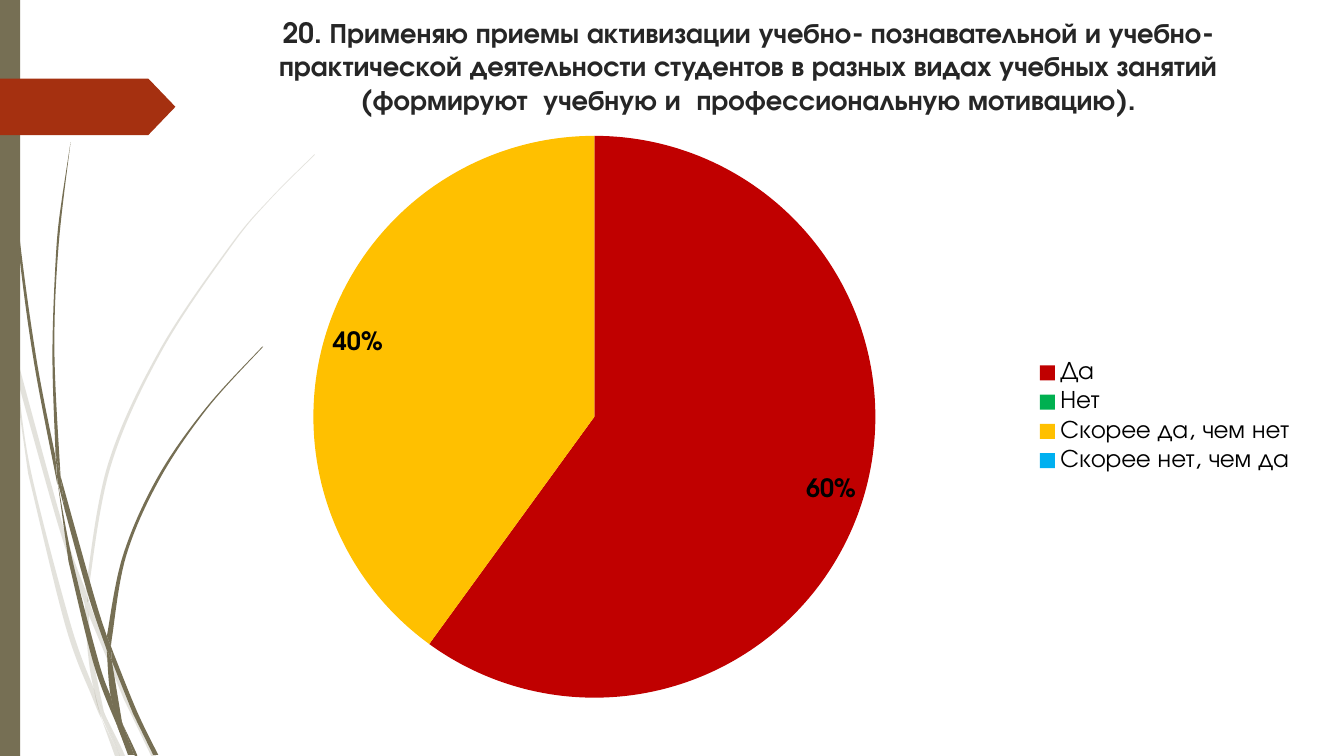
from pptx import Presentation
from pptx import util as u
from pptx.chart.data import CategoryChartData
from pptx.dml.color import RGBColor
from pptx.enum import chart as ch, shapes, text
from pptx.oxml.ns import qn
from pptx.oxml.xmlchemy import OxmlElement

FONT = "TeX Gyre Adventor"
OLIVE = "766F54"
RUST = "A53010"

PALE_STEMS = [
    ([(.11, 3.5), (.09, 3.22), (0, 2.82)], [(0, 2.99), (.1, 3.44)]),
    ([(.17, 3.76), (.58, 5.22), (.84, 5.99)], [(.85, 5.86), (.62, 5.2), (.14, 3.45)]),
    ([(.88, 5.96), (.88, 6.1)], [(1.23, 6.94), (1.5, 7.5)],
     [(1.55, 7.5), (1.27, 6.92), (.92, 6.07)]),
    ([(1.19, 7.5), (1.24, 7.5), (1.05, 7.11)],),
    ([(.93, 6.83), (.7, 6.19), (.31, 4.69), (.17, 3.76), (.11, 3.5)],
     [(.28, 4.7), (.65, 6.21), (.92, 6.93), (1.01, 7.14)]),
    ([(.84, 5.99), (.87, 6.46), (.93, 6.83), (1.05, 7.11)],
     [(1.03, 7.06), (.91, 6.46), (.88, 6.08)]),
    ([(.88, 5.96), (.88, 5.84), (1.1, 4.62), (1.6, 3.49), (2.29, 2.45), (2.68, 1.98),
      (3.12, 1.54)],
     [(3.12, 1.53), (2.68, 1.97), (2.28, 2.44), (1.58, 3.48), (1.07, 4.61), (.85, 5.84)]),
    ([(1.01, 7.14), (1.14, 7.5)], [(1.19, 7.5)]),
    ([(.88, 6.08), (.88, 5.96)], [(.85, 5.86), (.84, 5.99)]),
    ([(.93, 6.83), (.99, 7.07), (1.19, 7.5)], [(1.05, 7.11), (.96, 6.92)]),
]
DARK_STEMS = [
    ([(.03, 0), (.03, .48), (.07, 1.1), (.17, 2.33), (.33, 3.55), (.57, 4.81)],
     [(.55, 4.53), (.36, 3.55), (.19, 2.32), (.08, 1.09), (.05, .48), (.03, 0)]),
    ([(.64, 5.05), (.88, 5.92), (1.06, 6.45)], [(1.06, 6.31), (.93, 5.9), (.6, 4.72)]),
    ([(1.1, 6.41), (1.11, 6.56)], [(1.32, 7.08), (1.52, 7.49)],
     [(1.57, 7.49), (1.36, 7.06), (1.13, 6.49)]),
    ([(1.1, 6.91), (.98, 6.57), (.72, 5.56), (.57, 4.77)],
     [(.68, 5.57), (.93, 6.59), (1.17, 7.22)]),
    ([(.6, 4.72), (.54, 3.49), (.58, 2.45), (.7, 1.41)],
     [(.62, 1.93), (.56, 2.45), (.52, 3.49), (.55, 4.49)]),
    ([(1.33, 7.49), (1.36, 7.49), (1.22, 7.19)],),
    ([(.57, 4.77), (.64, 5.05)], [(.6, 4.72), (.55, 4.49)]),
    ([(1.11, 6.33), (1.25, 5.52), (1.58, 4.76), (2.05, 4.06), (2.61, 3.44)],
     [(2.6, 3.44), (2.04, 4.05), (1.56, 4.74), (1.22, 5.51), (1.06, 6.31)], [(1.1, 6.41)]),
    ([(1.17, 7.22), (1.27, 7.49)], [(1.31, 7.49)]),
    ([(1.06, 6.45), (1.1, 6.91), (1.22, 7.19)], [(1.21, 7.16), (1.11, 6.56)]),
    ([(1.06, 6.45), (1.11, 6.56)], [(1.1, 6.41), (1.06, 6.31)]),
    ([(1.1, 6.91), (1.17, 7.22), (1.3, 7.49)], [(1.33, 7.49), (1.22, 7.19), (1.16, 7.06)]),
]


def rgb(value):
    return RGBColor.from_string(value)


def handles(edge):
    padded = [edge[0], *edge, edge[-1]]
    return [[tuple(q + (r - p) / 6 for p, q, r in zip(a, b, c)),
             tuple(r - (s - q) / 6 for q, r, s in zip(b, c, d))]
            for a, b, c, d in zip(padded, padded[1:], padded[2:], padded[3:])]


class SurveySlide:
    def __init__(self, deck, font):
        self.slide = deck.slides.add_slide(deck.slide_layouts[5])
        self.font = font

    def apply(self, target, **formats):
        for key, value in formats.items():
            setattr(target, key, value)

    def type(self, font, size, color, bold=False):
        self.apply(font, name=self.font, size=u.Pt(size), bold=bold)
        font.color.rgb = rgb(color)

    def paint(self, shape, color, opacity=100):
        shape.shadow.inherit = False
        shape.fill.solid()
        shape.fill.fore_color.rgb = rgb(color)
        shape.line.fill.background()
        if opacity < 100:
            alpha = OxmlElement("a:alpha")
            alpha.set("val", str(opacity * 1000))
            shape.fill._xPr.solidFill[0].append(alpha)

    def bend(self, stem, edges):
        bends = [pair for edge in edges for pair in [None, *handles(edge)]][1:]
        for line, pair in zip(list(stem._element.iter(qn("a:lnTo"))), bends):
            if pair is None:
                continue
            curve = OxmlElement("a:cubicBezTo")
            for x, y in pair:
                point = OxmlElement("a:pt")
                point.set("x", str(u.Inches(x) - stem.left))
                point.set("y", str(u.Inches(y) - stem.top))
                curve.append(point)
            curve.append(line[0])
            line.getparent().replace(line, curve)

    def stems(self, outlines, color, opacity=100):
        bunch = self.slide.shapes.add_group_shape()
        for edges in outlines:
            points = [tuple(map(u.Inches, point)) for edge in edges for point in edge]
            pen = bunch.shapes.build_freeform(*points[0])
            pen.add_line_segments(points[1:], close=True)
            stem = pen.convert_to_shape()
            self.bend(stem, edges)
            self.paint(stem, color, opacity)

    def block(self, kind, box, color):
        shape = self.slide.shapes.add_shape(kind, *map(u.Inches, box))
        self.paint(shape, color)
        return shape

    def title(self, words, box):
        heading = self.slide.shapes.title
        self.apply(heading, **dict(zip(("left", "top", "width", "height"), map(u.Inches, box))))
        frame = heading.text_frame
        frame.text = words
        self.apply(frame, word_wrap=True, auto_size=text.MSO_AUTO_SIZE.NONE,
                   vertical_anchor=text.MSO_ANCHOR.TOP)
        frame.paragraphs[0].alignment = text.PP_ALIGN.CENTER
        self.type(frame.paragraphs[0].runs[0].font, 20, "262626", True)

    def pie(self, answers, box):
        data = CategoryChartData()
        data.categories = [answer for answer, _, _ in answers]
        data.add_series("Series 1", [share for _, share, _ in answers])
        chart = self.slide.shapes.add_chart(
            ch.XL_CHART_TYPE.PIE, *map(u.Inches, box), data).chart
        self.type(chart.font, 18, "000000")
        self.apply(chart, has_title=False, has_legend=True)
        self.apply(chart.legend, position=ch.XL_LEGEND_POSITION.RIGHT, include_in_layout=False)
        plot = chart.plots[0]
        self.apply(plot, vary_by_categories=True, has_data_labels=True)
        self.apply(plot.data_labels, show_percentage=True, show_value=False,
                   number_format="0%;;", number_format_is_linked=False,
                   position=ch.XL_LABEL_POSITION.INSIDE_END)
        self.type(plot.data_labels.font, 18, "000000", True)
        for index, (_, _, color) in enumerate(answers):
            fill = plot.series[0].points[index].format.fill
            fill.solid()
            fill.fore_color.rgb = rgb(color)


def main():
    deck = Presentation()
    deck.slide_width, deck.slide_height = u.Inches(13.33), u.Inches(7.5)
    survey = SurveySlide(deck, FONT)
    survey.stems(PALE_STEMS, OLIVE, 20)
    survey.stems(DARK_STEMS, OLIVE)
    survey.block(shapes.MSO_SHAPE.RECTANGLE, (0, 0, .2, 7.5), OLIVE)
    marker = survey.block(shapes.MSO_SHAPE.PENTAGON, (0, .78, 1.74, .56), RUST)
    marker.adjustments[0] = .48
    survey.title("20. Применяю приемы активизации учебно- познавательной и учебно- "
                 "практической деятельности студентов в разных видах учебных занятий "
                 "(формируют  учебную и  профессиональную мотивацию).", (1.87, .1, 11.1, 1.39))
    survey.pie([("Да", 60, "C00000"), ("Нет", 0, "00B050"),
                ("Скорее да, чем нет", 40, "FFC000"),
                ("Скорее нет, чем да", 0, "00B0F0")], (1.56, 1.21, 11.39, 5.85))
    deck.save("out.pptx")


if __name__ == "__main__":
    main()
